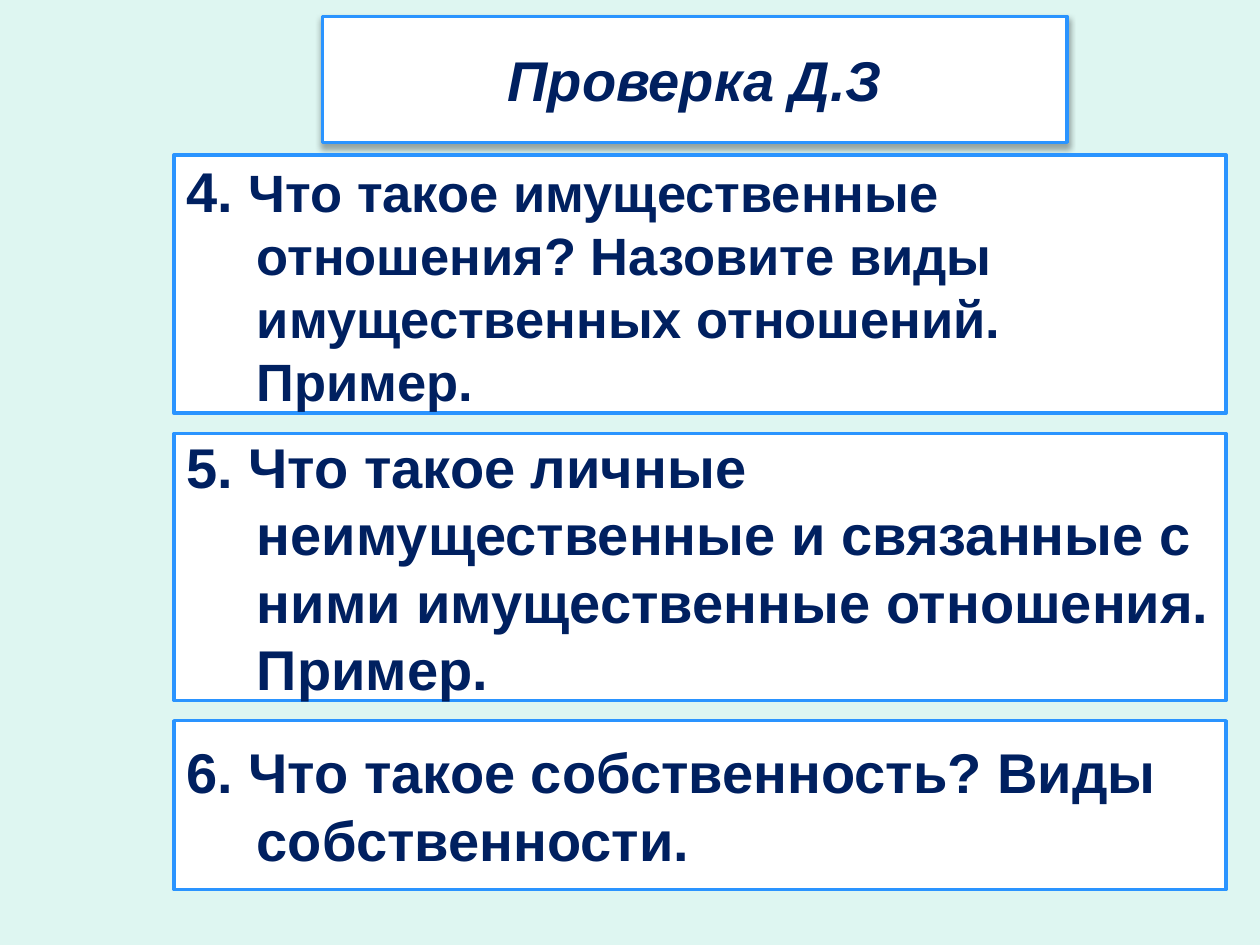
from lxml import etree
from pptx import Presentation
from pptx import util as u
from pptx.dml.color import RGBColor
from pptx.enum import shapes, text
from pptx.oxml import parse_xml
from pptx.oxml.ns import nsdecls, qn

PX = 9144
COLORS = {"page": "DEF6F1", "panel": "FFFFFF", "border": "2A94FF",
          "ink": "002060", "shadow": "000000"}
INDENT = 56
TITLE_BOX = (256, 13, 591, 100)
QUESTIONS_BOX = (138, 123, 835, 583)
QUESTION_GAP = 16
QUESTIONS = [
    (205, [("4. ", 32), ("Что такое имущественные отношения? Назовите виды "
                         "имущественных отношений. Пример.", 30)]),
    (212, [("5. Что такое личные неимущественные и связанные с ними "
            "имущественные отношения. Пример.", 32)]),
    (134, [("6. Что такое собственность? Виды собственности.", 32)]),
]


def color(name):
    """Return the named colour."""
    return RGBColor.from_string(COLORS[name])


def apply(target, formats):
    """Set each attribute of the target from a dict."""
    for name, value in formats.items():
        setattr(target, name, value)


def style_panel(panel, box):
    """Place a panel and give it the white fill, blue border and text frame."""
    apply(panel, dict(zip(("left", "top", "width", "height"), (n * PX for n in box))))
    panel.fill.solid()
    panel.fill.fore_color.rgb = color("panel")
    panel.line.color.rgb = color("border")
    panel.line.width = u.Pt(2)
    apply(panel.text_frame, {"word_wrap": True, "auto_size": text.MSO_AUTO_SIZE.NONE,
                             "vertical_anchor": text.MSO_ANCHOR.MIDDLE})


def add_span(para, words, size, italic=False):
    """Add a bold run of words to a paragraph."""
    span = para.add_run()
    span.text = words
    apply(span.font, {"name": "Arial", "size": u.Pt(size), "bold": True, "italic": italic})
    span.font.color.rgb = color("ink")


def add_shadow(panel):
    """Give a panel a soft shadow straight below it."""
    effects = parse_xml(
        f'<a:effectLst {nsdecls("a")}><a:outerShdw blurRad="{u.Pt(3.5)}" '
        f'dist="{u.Pt(2.2)}" dir="5400000" rotWithShape="0"/></a:effectLst>')
    shade = etree.SubElement(effects[0], qn("a:srgbClr"), val=COLORS["shadow"])
    etree.SubElement(shade, qn("a:alpha"), val="32000")
    panel.element.spPr.append(effects)


def hang(para, indent):
    """Give a paragraph a hanging indent."""
    props = para._p.get_or_add_pPr()
    for name, value in {"marL": indent, "indent": -indent}.items():
        props.set(name, str(value * PX))


def build_title(page, box):
    """Fill the title placeholder within the box."""
    title = page.shapes.title
    style_panel(title, box)
    add_shadow(title)
    para = title.text_frame.paragraphs[0]
    para.alignment = text.PP_ALIGN.CENTER
    add_span(para, "Проверка Д.З", 32, italic=True)


def build_questions(page, box):
    """Stack the question panels down the box with equal gaps."""
    left, top, width, _ = box
    for height, spans in QUESTIONS:
        panel = page.shapes.add_shape(shapes.MSO_SHAPE.RECTANGLE, 0, 0, PX, PX)
        panel.shadow.inherit = False
        style_panel(panel, (left, top, width, height))
        para = panel.text_frame.paragraphs[0]
        para.alignment = text.PP_ALIGN.LEFT
        hang(para, INDENT)
        for words, size in spans:
            add_span(para, words, size)
        top += height + QUESTION_GAP


def main():
    """Build the homework check slide."""
    deck = Presentation()
    apply(deck, {"slide_width": 1000 * PX, "slide_height": 750 * PX})
    page = deck.slides.add_slide(deck.slide_layouts[5])
    page.background.fill.solid()
    page.background.fill.fore_color.rgb = color("page")
    build_title(page, TITLE_BOX)
    build_questions(page, QUESTIONS_BOX)
    deck.save("out.pptx")


if __name__ == "__main__":
    main()
